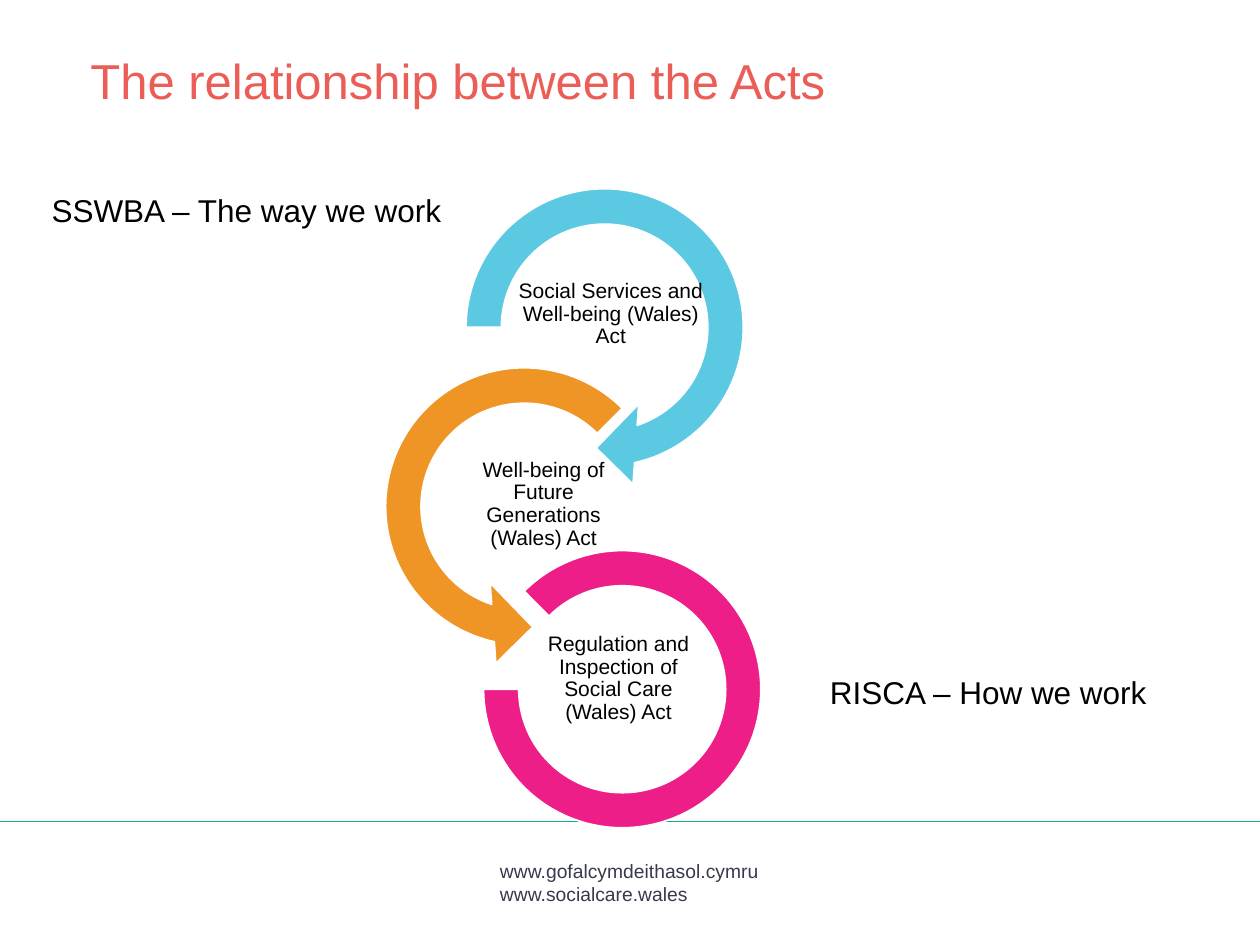
from typing import NamedTuple

from lxml import etree
from pptx import Presentation
from pptx.dml.color import RGBColor
from pptx.enum.shapes import MSO_CONNECTOR, MSO_SHAPE
from pptx.enum.text import MSO_ANCHOR, MSO_AUTO_SIZE, PP_ALIGN
from pptx.oxml.ns import qn
from pptx.util import Cm, Pt

LEFT, CENTER = PP_ALIGN.LEFT, PP_ALIGN.CENTER
TOP, MIDDLE = MSO_ANCHOR.TOP, MSO_ANCHOR.MIDDLE
RIGHT_ARROW = MSO_SHAPE.CIRCULAR_ARROW
LEFT_ARROW = MSO_SHAPE.LEFT_CIRCULAR_ARROW
ARC = MSO_SHAPE.BLOCK_ARC

CORAL = RGBColor(0xEB, 0x5E, 0x57)
BLUE = RGBColor(0x5C, 0xC9, 0xE3)
ORANGE = RGBColor(0xEF, 0x95, 0x26)
PINK = RGBColor(0xED, 0x1E, 0x87)
GREEN = RGBColor(0x16, 0xAD, 0x85)
SLATE = RGBColor(0x37, 0x39, 0x4C)
BLACK = RGBColor(0, 0, 0)
WHITE = RGBColor(0xFF, 0xFF, 0xFF)
FONT = "Arial"


class Box(NamedTuple):
    """Left, top, width and height in centimetres."""
    x: float
    y: float
    w: float
    h: float

    def cm(self) -> list:
        return [Cm(side) for side in self]


class Act(NamedTuple):
    """One ring and the label inside it."""
    kind: MSO_SHAPE
    ring: Box
    turns: tuple
    fill: RGBColor
    name: str
    label: Box


ACTS = [
    Act(RIGHT_ARROW, Box(8.94, 3.35, 6.5, 6.5), (0.11, 11.42, 45, 108, 0.125), BLUE,
        "Social Services and Well-being (Wales) Act", Box(10.26, 5.38, 4.11, 1.91)),
    Act(LEFT_ARROW, Box(7.32, 6.96, 6.5, 6.5), (0.11, 11.42, 63, 189, 0.125), ORANGE,
        "Well-being of Future Generations (Wales) Act", Box(9.12, 9.14, 3.68, 2.06)),
    Act(ARC, Box(9.75, 11.1, 5.59, 5.59), (135, 108, 0.127), PINK,
        "Regulation and Inspection of Social Care (Wales) Act",
        Box(10.69, 12.55, 3.56, 2.26)),
]
NOTES = [
    ("SSWBA – The way we work", Box(0.79, 3.45, 8.6, 1.55)),
    ("RISCA – How we work", Box(16.48, 13.18, 7.09, 1.55)),
]


def put_text(shape, text: str, *, size: float, color: RGBColor = BLACK,
             align=LEFT, anchor=MIDDLE, space: float = 1, after: float = 0,
             inset: float | None = None, wrap: bool = True) -> None:
    frame = shape.text_frame
    frame.text = text
    frame.word_wrap = wrap
    frame.auto_size = MSO_AUTO_SIZE.NONE
    frame.vertical_anchor = anchor
    if inset is not None:
        frame.margin_left = frame.margin_right = Cm(inset)
        frame.margin_top = frame.margin_bottom = Cm(inset)
    for para in frame.paragraphs:
        para.alignment = align
        para.line_spacing = space
        para.space_after = Pt(after)
        para.font.name = FONT
        para.font.size = Pt(size)
        para.font.color.rgb = color


def add_text(slide, box: Box, text: str, **style) -> None:
    put_text(slide.shapes.add_textbox(*box.cm()), text, **style)


def add_rule(slide, y: float, width: int) -> None:
    rule = slide.shapes.add_connector(MSO_CONNECTOR.STRAIGHT, 0, Cm(y), width, Cm(y))
    rule.line.color.rgb = GREEN
    rule.line.width = Pt(1)
    etree.SubElement(rule._element.spPr, qn("a:effectLst"))


def add_act(slide, act: Act) -> None:
    ring = slide.shapes.add_shape(act.kind, *act.ring.cm())
    for i, turn in enumerate(act.turns):
        ring.adjustments[i] = turn
    ring.shadow.inherit = False
    ring.fill.solid()
    ring.fill.fore_color.rgb = act.fill
    ring.line.color.rgb = WHITE
    ring.line.width = Pt(1)
    add_text(slide, act.label, act.name, size=12, align=CENTER,
             space=0.9, after=3, inset=0.03)


def main() -> None:
    deck = Presentation()
    deck.slide_width, deck.slide_height = Cm(25.4), Cm(19.05)
    slide = deck.slides.add_slide(deck.slide_layouts[5])

    title = slide.shapes.title
    title.left, title.top, title.width, title.height = Box(1.57, 1.02, 22.17, 2.87).cm()
    put_text(title, "The relationship between the Acts", size=28, color=CORAL,
             anchor=TOP, space=0.9)

    add_text(slide, Box(9.83, 17.2, 5.74, 1.17),
             "www.gofalcymdeithasol.cymru\nwww.socialcare.wales",
             size=11, color=SLATE, wrap=False)
    add_rule(slide, 16.56, deck.slide_width)
    for act in ACTS:
        add_act(slide, act)
    for text, box in NOTES:
        add_text(slide, box, text, size=18)

    deck.save("out.pptx")


if __name__ == "__main__":
    main()
